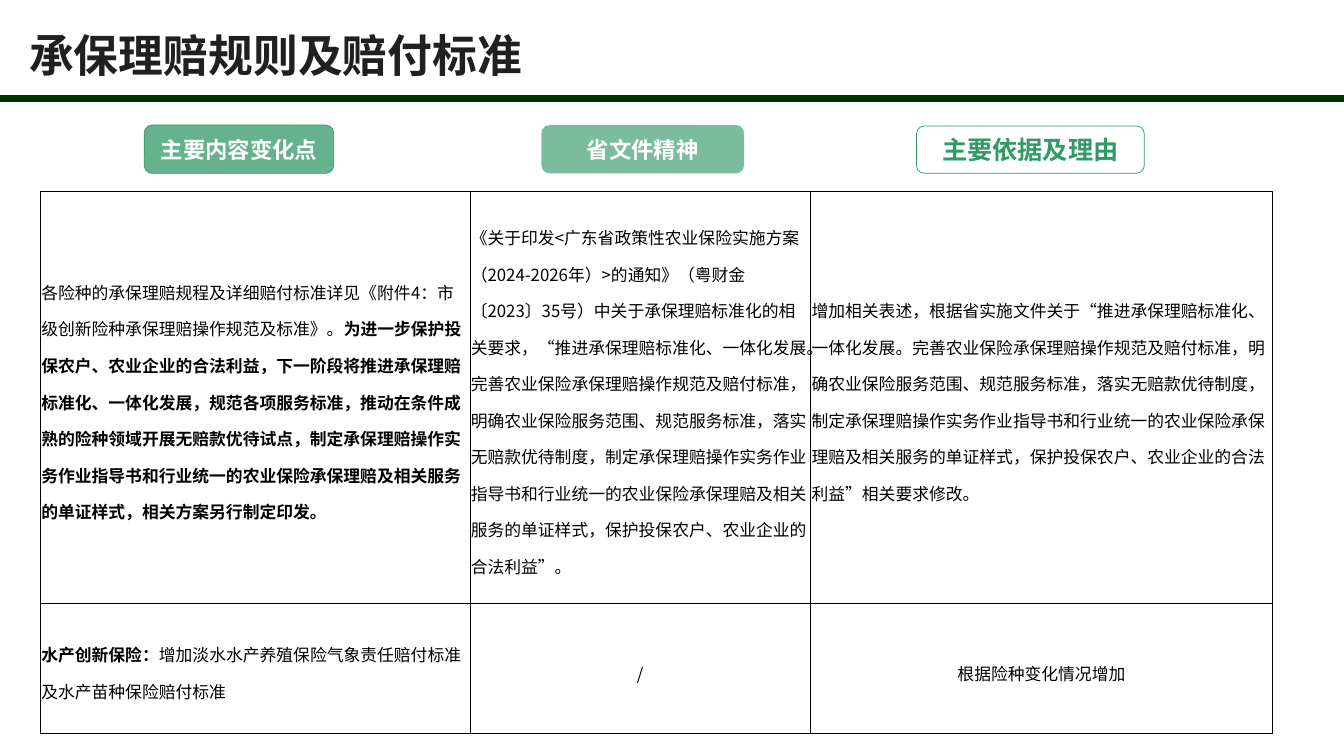
import pptx
import pptx.util
import pptx.dml.color
import pptx.enum.shapes
import pptx.enum.text
import lxml.etree
from pptx.util import Inches, Pt

FONT = "Noto Sans CJK SC"
COLORS = {"title": "1F2020", "rule": "003300", "green": "339966",
          "white": "FFFFFF", "black": "000000"}

TITLE = "承保理赔规则及赔付标准"

# Header badges: text, left, top, width, height, size, text colour, fill opacity, outline
BADGES = [
    ("主要内容变化点", 1.43, 1.24, 1.88, 0.48, 16, "white", 75, True),
    ("省文件精神", 5.37, 1.24, 2.01, 0.48, 16, "white", 65, False),
    ("主要依据及理由", 9.09, 1.25, 2.26, 0.47, 18, "green", None, True),
]

# Table cells: (centred, [(text, bold), ...])
ROWS = [
    [
        (False, [
            ("各险种的承保理赔规程及详细赔付标准详见《附件4：市级创新险种承保理赔操作规范及标准》。", False),
            ("为进一步保护投保农户、农业企业的合法利益，下一阶段将推进承保理赔标准化、一体化发展，"
             "规范各项服务标准，推动在条件成熟的险种领域开展无赔款优待试点，制定承保理赔操作实务作业"
             "指导书和行业统一的农业保险承保理赔及相关服务的单证样式，相关方案另行制定印发。", True),
        ]),
        (False, [
            ("《关于印发<广东省政策性农业保险实施方案（2024-2026年）>的通知》（粤财金〔2023〕35号）"
             "中关于承保理赔标准化的相关要求，“推进承保理赔标准化、一体化发展。完善农业保险承保理赔"
             "操作规范及赔付标准，明确农业保险服务范围、规范服务标准，落实无赔款优待制度，制定承保理赔"
             "操作实务作业指导书和行业统一的农业保险承保理赔及相关服务的单证样式，保护投保农户、"
             "农业企业的合法利益”。", False),
        ]),
        (False, [
            ("增加相关表述，根据省实施文件关于“推进承保理赔标准化、一体化发展。完善农业保险承保理赔"
             "操作规范及赔付标准，明确农业保险服务范围、规范服务标准，落实无赔款优待制度，制定承保理赔"
             "操作实务作业指导书和行业统一的农业保险承保理赔及相关服务的单证样式，保护投保农户、"
             "农业企业的合法利益”相关要求修改。", False),
        ]),
    ],
    [
        (False, [("水产创新保险：", True),
                 ("增加淡水水产养殖保险气象责任赔付标准及水产苗种保险赔付标准", False)]),
        (True, [("/", False)]),
        (True, [("根据险种变化情况增加", False)]),
    ],
]
COL_WIDTHS = [4.26, 3.38, 4.58]
ROW_HEIGHTS = [4.09, 1.29]

ALIGN = pptx.enum.text.PP_ALIGN
ANCHOR = pptx.enum.text.MSO_ANCHOR
NS = pptx.oxml.ns.qn


def rgb(name):
    return pptx.dml.color.RGBColor.from_string(COLORS[name])


def add_run(p, text, size, color, bold):
    r = p.add_run()
    r.text = text
    r.font.size, r.font.bold, r.font.name = Pt(size), bold, FONT
    r.font.color.rgb = rgb(color)
    ea = lxml.etree.SubElement(r.font._element, NS("a:ea"))
    ea.set("typeface", FONT)


def add_border(cell):
    tc_pr = cell._tc.get_or_add_tcPr()
    for side in ("lnL", "lnR", "lnT", "lnB"):
        ln = lxml.etree.SubElement(tc_pr, NS("a:" + side), w=str(Pt(0.5)))
        fill = lxml.etree.SubElement(ln, NS("a:solidFill"))
        lxml.etree.SubElement(fill, NS("a:srgbClr"), val=COLORS["black"])


prs = pptx.Presentation()
prs.slide_width, prs.slide_height = Inches(13.33), Inches(7.5)
s = prs.slides.add_slide(prs.slide_layouts[6])

# Title
tf = s.shapes.add_textbox(Inches(0.19), Inches(0.29), Inches(12.09), Inches(0.77)).text_frame
tf.word_wrap = True
tf.paragraphs[0].line_spacing = 0.9
add_run(tf.paragraphs[0], TITLE, 32, "title", True)

# Table
frame = s.shapes.add_table(len(ROWS), len(COL_WIDTHS), Inches(0.4), Inches(1.9),
                           Inches(sum(COL_WIDTHS)), Inches(sum(ROW_HEIGHTS)))
table = frame.table
table.first_row = table.horz_banding = False
for col, width in zip(table.columns, COL_WIDTHS):
    col.width = Inches(width)
for row, height, contents in zip(table.rows, ROW_HEIGHTS, ROWS):
    row.height = Inches(height)
    for cell, (centred, runs) in zip(row.cells, contents):
        cell.margin_left = cell.margin_right = cell.margin_top = Inches(0.01)
        cell.margin_bottom = Inches(0.05)
        cell.vertical_anchor = ANCHOR.MIDDLE
        add_border(cell)
        cell.fill.background()
        p = cell.text_frame.paragraphs[0]
        p.line_spacing = 1.5
        p.alignment = ALIGN.CENTER if centred else ALIGN.LEFT
        for text, bold in runs:
            add_run(p, text, 12, "black", bold)

# Rule under the title
rule = s.shapes.add_connector(pptx.enum.shapes.MSO_CONNECTOR.STRAIGHT,
                              0, Inches(0.98), prs.slide_width, Inches(0.98))
rule.line.color.rgb = rgb("rule")
rule.line.width = Pt(4.75)
lxml.etree.SubElement(rule._element.spPr, NS("a:effectLst"))

# Header badges
for text, left, top, width, height, size, color, opacity, outlined in BADGES:
    sp = s.shapes.add_shape(pptx.enum.shapes.MSO_SHAPE.ROUNDED_RECTANGLE,
                            Inches(left), Inches(top), Inches(width), Inches(height))
    sp.shadow.inherit = False
    sp.adjustments[0] = 0.167
    if opacity:
        sp.fill.solid()
        sp.fill.fore_color.rgb = rgb("green")
        clr = sp._element.spPr.find(".//" + NS("a:srgbClr"))
        lxml.etree.SubElement(clr, NS("a:alpha"), val=str(opacity * 1000))
    else:
        sp.fill.background()
    if outlined:
        sp.line.color.rgb = rgb("green")
        sp.line.width = Pt(0.5)
    else:
        sp.line.fill.background()
    tf = sp.text_frame
    tf.word_wrap = True
    tf.vertical_anchor = ANCHOR.MIDDLE
    tf.paragraphs[0].alignment = ALIGN.CENTER
    add_run(tf.paragraphs[0], text, size, color, True)

prs.save("out.pptx")
